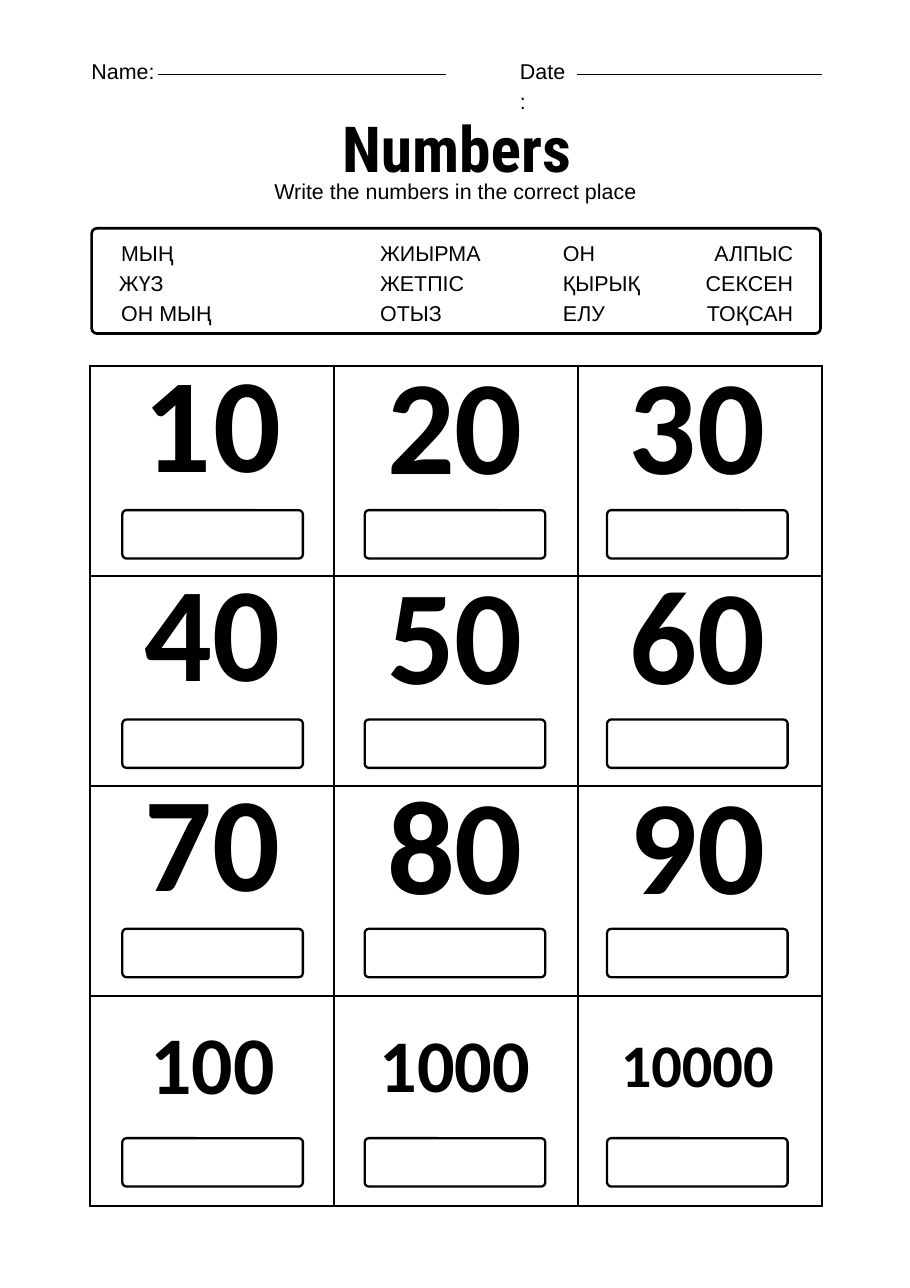
import pptx
import pptx.util
import pptx.dml.color
import pptx.enum.shapes
import pptx.enum.text
import pptx.oxml
import pptx.oxml.ns
from pptx.util import Inches, Pt

BLACK = pptx.dml.color.RGBColor(0, 0, 0)
ALIGN = pptx.enum.text.PP_ALIGN
SHAPES = pptx.enum.shapes.MSO_SHAPE

deck = pptx.Presentation()
deck.slide_width, deck.slide_height = Inches(8.26), Inches(11.69)
sheet = deck.slides.add_slide(deck.slide_layouts[6])

LEFT, WIDTH = 0.82, 6.64
RIGHT = LEFT + WIDTH


def write(text, left, top, width, height, size=14, leading=19.6,
          font="Arial", bold=False, align=ALIGN.LEFT, tracking=0):
    box = sheet.shapes.add_textbox(Inches(left), Inches(top), Inches(width), Inches(height))
    frame = box.text_frame
    frame.margin_left = frame.margin_right = frame.margin_top = frame.margin_bottom = 0
    frame.word_wrap = True
    frame.auto_size = pptx.enum.text.MSO_AUTO_SIZE.SHAPE_TO_FIT_TEXT
    line = frame.paragraphs[0]
    line.alignment = align
    line.line_spacing = Pt(leading)
    run = line.add_run()
    run.text = text
    run.font.name, run.font.size, run.font.bold = font, Pt(size), bold
    run.font.color.rgb = BLACK
    if tracking:
        run._r.get_or_add_rPr().set("spc", str(tracking))


def outline_box(left, top, width, height, radius, weight):
    """Draw an unfilled rounded box whose outer edge fits the given bounds."""
    half = weight / 72 / 2
    box = sheet.shapes.add_shape(
        SHAPES.ROUNDED_RECTANGLE, Inches(left + half), Inches(top + half),
        Inches(width - 2 * half), Inches(height - 2 * half))
    box.adjustments[0] = radius / height
    box.shadow.inherit = False
    box.fill.background()
    box.line.color.rgb = BLACK
    box.line.width = Pt(weight)


# Name and date lines
for start, end in ((1.43, 4.05), (5.24, RIGHT)):
    rule = sheet.shapes.add_connector(
        pptx.enum.shapes.MSO_CONNECTOR.STRAIGHT,
        Inches(start), Inches(0.68), Inches(end), Inches(0.68))
    rule.line.color.rgb = BLACK
    rule.line.width = Pt(0.75)
    rule._element.spPr.append(pptx.oxml.parse_xml(
        f"<a:effectLst {pptx.oxml.ns.nsdecls('a')}/>"))
write("Name:", 0.83, 0.49, 0.69, 0.26)
write("Date:", 4.72, 0.49, 0.46, 0.26)

# Heading
write("Numbers", 0.86, 0.87, 6.57, 0.78, size=41.5, leading=58.1,
      font="Roboto Condensed", bold=True, align=ALIGN.CENTER)
write("Write the numbers in the correct place", 0.83, 1.58, 6.61, 0.26, align=ALIGN.CENTER)

# Word bank
outline_box(LEFT, 2.06, WIDTH, 0.98, 0.05, 1.75)
word_columns = (
    (1.1, 1.66, ALIGN.LEFT, ("МЫҢ", "ЖҮЗ", "ОН МЫҢ")),
    (3.45, 1.15, ALIGN.LEFT, ("ЖИЫРМА", "ЖЕТПІС", "ОТЫЗ")),
    (5.11, 0.89, ALIGN.LEFT, ("ОН", "ҚЫРЫҚ", "ЕЛУ")),
    (6.33, 0.87, ALIGN.RIGHT, ("АЛПЫС", "СЕКСЕН", "ТОҚСАН")),
)
for left, width, align, words in word_columns:
    for row, word in enumerate(words):
        nudge = 0.02 if word == "ЖҮЗ" else 0
        write(word, left - nudge, 2.14 + 0.273 * row, width + nudge, 0.26, align=align)

# Number grid
ROWS, COLS = 4, 3
grid = sheet.shapes.add_table(
    ROWS, COLS, Inches(LEFT), Inches(3.32), Inches(WIDTH), Inches(7.63)).table
grid.first_row = grid.horz_banding = False
for cell in grid.iter_cells():
    cell.fill.background()
    borders = cell._tc.get_or_add_tcPr()
    for position, side in enumerate(("lnL", "lnR", "lnT", "lnB")):
        borders.insert(position, pptx.oxml.parse_xml(
            f'<a:{side} {pptx.oxml.ns.nsdecls("a")} w="{Pt(1.5)}"><a:solidFill>'
            f'<a:srgbClr val="{BLACK}"/></a:solidFill></a:{side}>'))

# Numbers, each above its answer box
numbers = (10, 20, 30, 40, 50, 60, 70, 80, 90, 100, 1000, 10000)
small_sizes = {100: 53.5, 1000: 48.5, 10000: 39.5}
trackings = {10: 150, 30: 90}
for index, number in enumerate(numbers):
    row, col = divmod(index, COLS)
    left = 1.1 + 2.2 * col
    size = small_sizes.get(number, 87.5)
    top = 9.71 if number in small_sizes else 3.92 + 1.905 * row + (0.02 if col else 0)
    outline_box(left, 4.62 + 1.9 * row, 1.66, 0.46, 0.04, 1.5)
    write(str(number), left, top, 1.66, size * 0.0093, size=size, leading=size / 2,
          font="Calibri", bold=True, align=ALIGN.CENTER, tracking=trackings.get(number, 0))

deck.save("out.pptx")
